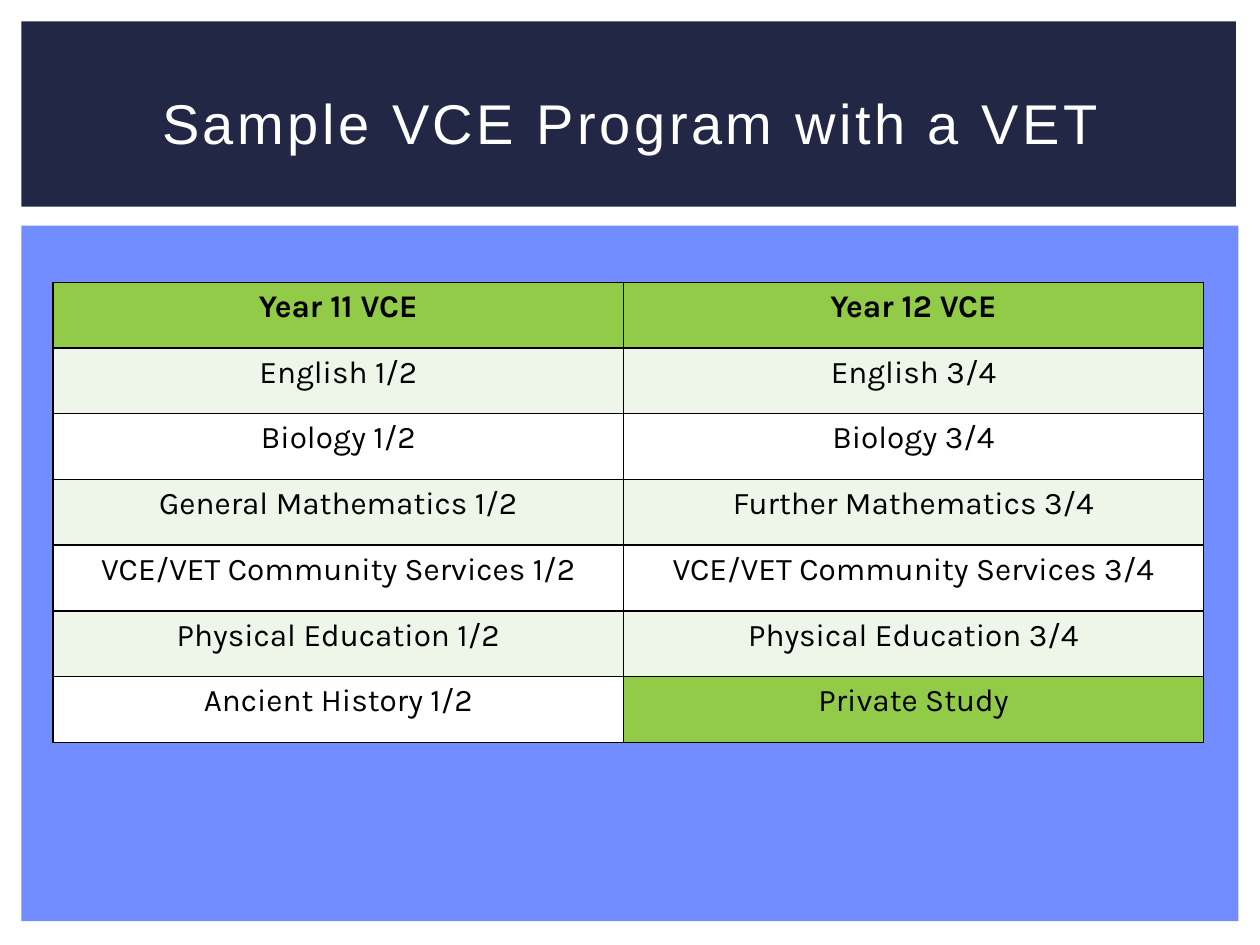
import pptx
import pptx.dml.color
import pptx.enum.shapes
import pptx.enum.text
import pptx.oxml
import pptx.oxml.ns
import pptx.util
from pptx.util import Inches

RGBColor = pptx.dml.color.RGBColor
NAVY = RGBColor(0x21, 0x27, 0x45)
BLUE = RGBColor(0x71, 0x8D, 0xFF)
GREEN = RGBColor(0x91, 0xCB, 0x48)
PALE_GREEN = RGBColor(0xEE, 0xF6, 0xE9)
WHITE = RGBColor(0xFF, 0xFF, 0xFF)
BLACK = RGBColor(0x00, 0x00, 0x00)

SUBJECTS = [
    ("Year 11 VCE", "Year 12 VCE"),
    ("English 1/2", "English 3/4"),
    ("Biology 1/2", "Biology 3/4"),
    ("General Mathematics 1/2", "Further Mathematics 3/4"),
    ("VCE/VET Community Services 1/2", "VCE/VET Community Services 3/4"),
    ("Physical Education 1/2", "Physical Education 3/4"),
    ("Ancient History 1/2", "Private Study"),
]


class SlideBuilder:
    title_font, title_size = "Arial", 32
    table_font, table_size = "Karla", 18

    def __init__(self, slide):
        self.slide = slide

    def panel(self, left, top, width, height, color):
        panel = self.slide.shapes.add_shape(
            pptx.enum.shapes.MSO_SHAPE.RECTANGLE,
            Inches(left), Inches(top), Inches(width), Inches(height))
        panel.shadow.inherit = False
        panel.fill.solid()
        panel.fill.fore_color.rgb = color
        panel.line.fill.background()

    def add_run(self, frame, text, font, size, color, bold=False):
        paragraph = frame.paragraphs[0]
        paragraph.alignment = pptx.enum.text.PP_ALIGN.CENTER
        run = paragraph.add_run()
        run.text = text
        run.font.name = font
        run.font.size = pptx.util.Pt(size)
        run.font.color.rgb = color
        run.font.bold = bold
        return run

    def title(self, text, left, top, width, height):
        frame = self.slide.shapes.add_textbox(
            Inches(left), Inches(top), Inches(width), Inches(height)).text_frame
        frame.word_wrap = True
        frame.vertical_anchor = pptx.enum.text.MSO_ANCHOR.MIDDLE
        run = self.add_run(frame, text, self.title_font, self.title_size, WHITE)
        run._r.get_or_add_rPr().set("spc", "200")

    def border(self, cell):
        properties = cell._tc.get_or_add_tcPr()
        for side in ("lnL", "lnR", "lnT", "lnB"):
            properties.append(pptx.oxml.parse_xml(
                f'<a:{side} {pptx.oxml.ns.nsdecls("a")} w="12700"><a:solidFill>'
                f'<a:srgbClr val="{BLACK}"/></a:solidFill></a:{side}>'))

    def table(self, rows, left, top, column_widths, row_height, fill_for):
        table = self.slide.shapes.add_table(
            len(rows), len(column_widths), Inches(left), Inches(top),
            Inches(sum(column_widths)), Inches(row_height * len(rows))).table
        for column, width in zip(table.columns, column_widths):
            column.width = Inches(width)
        for r, subjects in enumerate(rows):
            table.rows[r].height = Inches(row_height)
            for c, subject in enumerate(subjects):
                cell = table.cell(r, c)
                self.border(cell)
                cell.fill.solid()
                cell.fill.fore_color.rgb = fill_for(r, subject)
                self.add_run(cell.text_frame, subject, self.table_font,
                             self.table_size, BLACK, bold=r == 0)


def subject_fill(row, subject):
    if row == 0 or subject == "Private Study":
        return GREEN
    return PALE_GREEN if row % 2 else WHITE


def main():
    presentation = pptx.Presentation()
    presentation.slide_width = Inches(10)
    presentation.slide_height = Inches(7.5)
    builder = SlideBuilder(
        presentation.slides.add_slide(presentation.slide_layouts[6]))

    # Background panels
    builder.panel(0.17, 1.79, 9.66, 5.52, BLUE)
    builder.panel(0.17, 0.17, 9.64, 1.47, NAVY)

    # Two-year subject program
    builder.table(SUBJECTS, 0.42, 2.24, (4.53, 4.6), 0.522, subject_fill)

    # Heading
    builder.title("Sample VCE Program with a VET", 0.42, 0.39, 9.17, 1.15)

    presentation.save("out.pptx")


if __name__ == "__main__":
    main()
